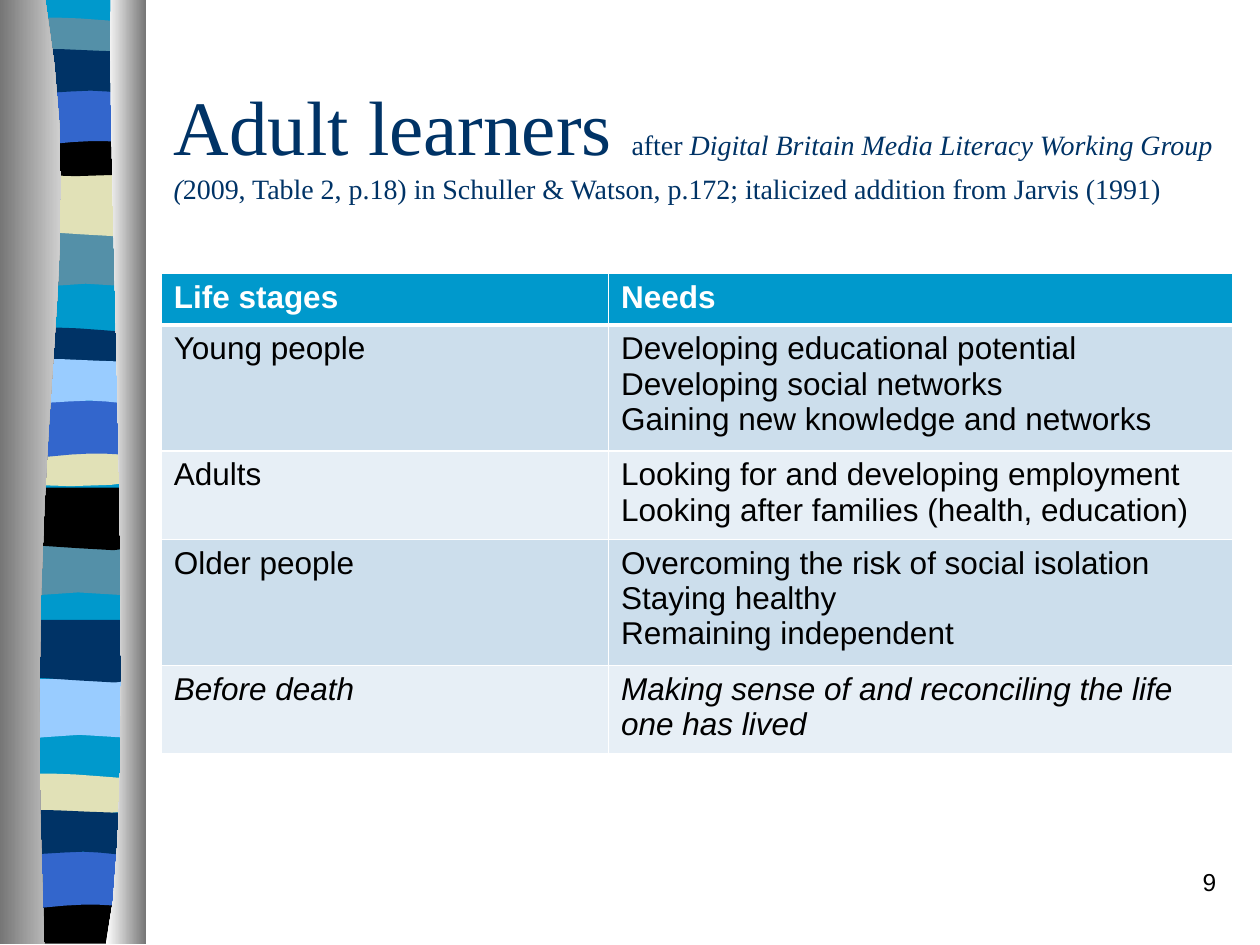
from dataclasses import dataclass

from lxml.etree import SubElement
from pptx import Presentation
from pptx.dml.color import RGBColor
from pptx.enum.text import MSO_ANCHOR, PP_ALIGN
from pptx.oxml.ns import qn
from pptx.util import Inches, Pt

WIDTH, HEIGHT = 10, 7.5
BAND_WIDTH = 1.08
UNITS = 1000  # outline units per inch
LEFT, CONTENT_WIDTH = 0.128 * WIDTH, 0.85 * WIDTH
NAVY, BLUE, SKY, AQUA = "003366", "3366CC", "99CCFF", "0099CC"
TEAL, SAND, BLACK, WHITE, GRAY = "5490A8", "E1E1B7", "000000", "FFFFFF", "767676"

Point = tuple[float, float]
Edge = list[Point]  # a straight pair, or a start and three points for each cubic curve


@dataclass
class Motif:
    top: Edge  # left to right
    bottom: Edge  # right to left


@dataclass
class Band:
    motif: Motif
    left: float
    top: float
    color: str


@dataclass
class Span:
    text: str
    size: float
    italic: bool = False


FLAT = [(0, 0), (BAND_WIDTH, 0)]
DIPPED = [(0, 0), (0.66, 0.05), (0.85, 0), (BAND_WIDTH, 0)]
SWELL = Motif(FLAT, [(1.08, 0.47), (0.33, 0.38), (0.18, 0.54), (0, 0.47)])
RIPPLE = Motif(FLAT, [(1.08, 0.47), (0.9, 0.55), (0.33, 0.42), (0, 0.47)])
ARCH = Motif([(0, 0.04), (0.07, 0), (0.23, 0), (0.41, 0),
              (0.59, 0), (0.94, 0.04), (1.08, 0.04)],
             [(1.08, 0.29), (0.9, 0.33), (0.18, 0.33), (0, 0.29)])
DIP = Motif(DIPPED, [(1.08, 0.33), (0.9, 0.38), (0.18, 0.38), (0, 0.33)])
FOOT = Motif(DIPPED, [(1.08, 0.37), (0, 0.37)])
HOLLOW = Motif(FLAT, [(1.08, 0.47), (0.92, 0.42), (0.85, 0.42), (0.67, 0.42),
                      (0.49, 0.42), (0.17, 0.47), (0, 0.47)])
WAVE = Motif([(0, 0.05), (0.15, 0), (0.73, 0.05), (0.91, 0.05),
              (0.97, 0.05), (1.03, 0.05), (1.08, 0.05)],
             [(1.08, 0.36), (1.01, 0.41), (0.84, 0.36), (0.66, 0.36),
              (0.48, 0.36), (0.11, 0.41), (0, 0.36)])

# Back to front
BANDS = [
    Band(SWELL, 0.06, 1.81, TEAL), Band(RIPPLE, 0.06, 1.38, SAND),
    Band(ARCH, 0.06, 0.14, TEAL), Band(DIP, 0.06, 1.03, BLACK),
    Band(HOLLOW, 0.06, 0.7, BLUE), Band(WAVE, 0.06, 0.36, NAVY),
    Band(SWELL, 0, 4.26, TEAL), Band(RIPPLE, 0.02, 3.87, BLACK),
    Band(ARCH, 0.05, 2.6, NAVY), Band(DIP, 0.02, 3.49, SAND),
    Band(HOLLOW, 0.05, 3.18, BLUE), Band(WAVE, 0.05, 2.82, SKY),
    Band(SWELL, 0.01, 5.39, SKY), Band(RIPPLE, 0.03, 4.92, NAVY),
    Band(ARCH, 0.02, 6.14, SAND), Band(FOOT, 0.02, 7.12, BLACK),
    Band(HOLLOW, 0, 6.76, BLUE), Band(WAVE, 0, 6.4, NAVY),
]

TITLE = [
    Span("Adult learners ", 44),
    Span("after ", 16),
    Span("Digital Britain Media Literacy Working Group (", 16, True),
    Span("2009, Table 2, p.18) in Schuller & Watson, p.172; "
         "italicized addition from Jarvis (1991)", 16),
]

ROWS = [
    ("Life stages", "Needs"),
    ("Young people", "Developing educational potential\nDeveloping social networks\n"
                     "Gaining new knowledge and networks"),
    ("Adults", "Looking for and developing employment\n"
               "Looking after families (health, education)"),
    ("Older people", "Overcoming the risk of social isolation\nStaying healthy\n"
                     "Remaining independent"),
    ("Before death", "Making sense of and reconciling the life one has lived"),
]
COLUMN_WIDTHS = (3.55, 4.95)
ROW_HEIGHT = 0.41  # least height; rows grow with their text


def rgb(color: str) -> RGBColor:
    return RGBColor.from_string(color)


def trace(edge: Edge, steps: int = 4) -> list[Point]:
    """Sample the cubic curves of an edge; a straight pair stays as it is."""
    if len(edge) == 2:
        return edge
    points = [edge[0]]
    for first in range(0, len(edge) - 1, 3):
        curve = edge[first:first + 4]
        for step in range(1, steps + 1):
            t = step / steps
            weights = ((1 - t) ** 3, 3 * t * (1 - t) ** 2, 3 * t * t * (1 - t), t ** 3)
            points.append(tuple(sum(w * p[axis] for w, p in zip(weights, curve))
                                for axis in (0, 1)))
    return points


def draw_outline(page, points: list[Point], colors: list[str], left=0.0, top=0.0) -> None:
    """Draw a closed outline, plain or with a left-to-right gradient."""
    places = [(round((left + x) * UNITS), round((top + y) * UNITS)) for x, y in points]
    builder = page.shapes.build_freeform(*places[0], scale=Inches(1) / UNITS)
    builder.add_line_segments(places[1:], close=True)
    shape = builder.convert_to_shape()
    shape.shadow.inherit = False
    shape.line.fill.background()
    if len(colors) == 1:
        shape.fill.solid()
        shape.fill.fore_color.rgb = rgb(colors[0])
    else:
        shape.fill.gradient()
        shape.fill.gradient_angle = 0
        for stop, color in zip(shape.fill.gradient_stops, colors):
            stop.color.rgb = rgb(color)


def draw_ribbon(page) -> None:
    draw_outline(page, [(0.06, 0), (1.14, 0), (1.14, 7.44), (0.06, 7.44)], [AQUA])
    for band in BANDS:
        points = trace(band.motif.top) + trace(band.motif.bottom)
        draw_outline(page, points, [band.color], band.left, band.top)
    # Curtains on both sides
    left_edge = [(0.36, 0), (0.72, 2.16), (0.17, 2.96), (0.35, 7.49)]
    draw_outline(page, trace(left_edge, 12) + [(0, 7.49), (0, 0)], [GRAY, "D0D0D0"])
    right_edge = [(0.88, 0), (0.84, 1.25), (1.11, 6.46), (0.84, 7.49)]
    draw_outline(page, trace(right_edge, 12) + [(1.16, 7.49), (1.16, 0)], [WHITE, GRAY])


def draw_text(page, place: tuple, spans: list[Span], font: str, color: str):
    box = page.shapes.add_textbox(*map(Inches, place))
    box.text_frame.word_wrap = True
    paragraph = box.text_frame.paragraphs[0]
    for span in spans:
        run = paragraph.add_run()
        run.text = span.text
        run.font.name, run.font.size = font, Pt(span.size)
        run.font.italic = span.italic
        run.font.color.rgb = rgb(color)
    return box.text_frame


def add_borders(cell, bottom_width: float) -> None:
    properties = cell._tc.get_or_add_tcPr()
    for index, (side, width) in enumerate(
            (("a:lnL", 1), ("a:lnR", 1), ("a:lnT", 1), ("a:lnB", bottom_width))):
        line = SubElement(properties, qn(side), w=str(Pt(width)))
        fill = SubElement(line, qn("a:solidFill"))
        SubElement(fill, qn("a:srgbClr"), val=WHITE)
        properties.insert(index, line)


def draw_table(page) -> None:
    frame = page.shapes.add_table(
        len(ROWS), len(COLUMN_WIDTHS), Inches(LEFT), Inches(2.17),
        Inches(CONTENT_WIDTH), Inches(ROW_HEIGHT * len(ROWS)))
    table = frame.table
    for column, width in zip(table.columns, COLUMN_WIDTHS):
        column.width = Inches(width)
    for index, (row, texts) in enumerate(zip(table.rows, ROWS)):
        row.height = Inches(ROW_HEIGHT)
        header, last = index == 0, index == len(ROWS) - 1
        color = AQUA if header else ("E7EFF6", "CCDEEC")[index % 2]
        for cell, text in zip(row.cells, texts):
            cell.text_frame.text = text
            cell.fill.solid()
            cell.fill.fore_color.rgb = rgb(color)
            for paragraph in cell.text_frame.paragraphs:
                font = paragraph.runs[0].font
                font.name, font.size = "Arial", Pt(18)
                font.bold, font.italic = header, last
                font.color.rgb = rgb(WHITE if header else BLACK)
            add_borders(cell, 3 if header else 1)
    frame.height = Inches(3.81)


def main() -> None:
    deck = Presentation()
    deck.slide_width, deck.slide_height = Inches(WIDTH), Inches(HEIGHT)
    page = deck.slides.add_slide(deck.slide_layouts[6])
    draw_ribbon(page)
    # Title
    title = draw_text(page, (LEFT, 0.5, CONTENT_WIDTH, 1.25), TITLE, "Times New Roman", NAVY)
    title.vertical_anchor = MSO_ANCHOR.MIDDLE
    draw_table(page)
    # Page number
    number = draw_text(page, (7.67, 6.83, 2.08, 0.5), [Span("9", 14)], "Arial", BLACK)
    number.paragraphs[0].alignment = PP_ALIGN.RIGHT
    deck.save("out.pptx")


if __name__ == "__main__":
    main()
